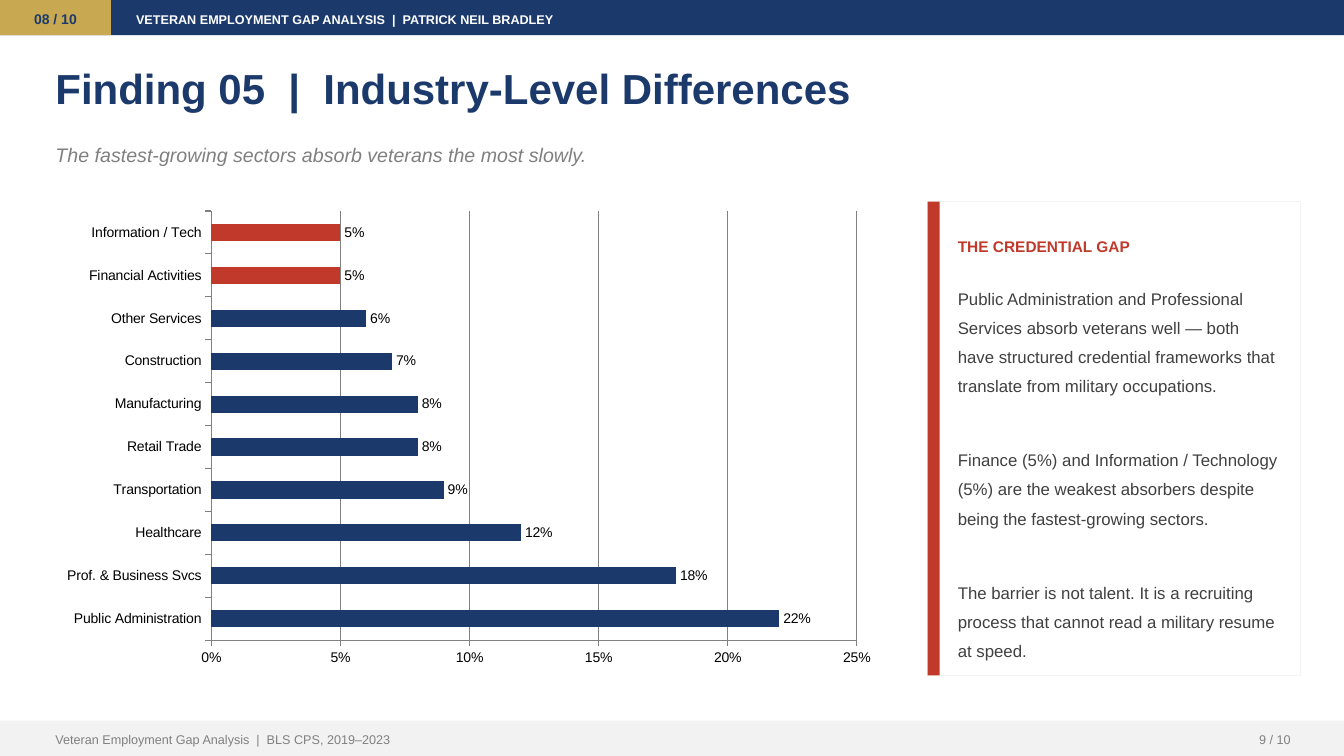
"""Build the slide on industry-level differences in veteran hiring."""
from dataclasses import dataclass

import pptx
import pptx.chart.data
import pptx.dml.color
import pptx.enum.chart
import pptx.enum.shapes
import pptx.enum.text
import pptx.util

Inches = pptx.util.Inches
Pt = pptx.util.Pt
Align = pptx.enum.text.PP_ALIGN
Anchor = pptx.enum.text.MSO_ANCHOR

FONT = "Arial"
HUES = {
    "navy": "1B3A6B", "gold": "C8A951", "red": "C0392B", "white": "FFFFFF",
    "pale": "F2F2F2", "gray": "808080", "dark": "404040", "black": "000000",
}
WIDE, HIGH, BAND = 13.33, 7.5, 0.35
FOOT = HIGH - BAND
LEFT, TOP, TALL = 0.5, 2, 4.7
SIDE, INNER = 9.2, 9.45


@dataclass
class Block:
    x: float
    y: float
    w: float
    h: float
    fill: str
    line: str = ""


@dataclass
class Label:
    x: float
    y: float
    w: float
    h: float
    text: str
    size: int
    hue: str
    bold: bool = False
    slant: bool = False
    align: Align = Align.LEFT
    anchor: Anchor = Anchor.MIDDLE
    lead: float = 1.2
    gap: int = 0


BLOCKS = [
    Block(0, 0, WIDE, BAND, "navy"),
    Block(0, 0, 1.1, BAND, "gold"),
    Block(SIDE, TOP, 3.7, TALL, "white", "pale"),
    Block(SIDE, TOP, 0.12, TALL, "red"),
    Block(0, FOOT, WIDE, BAND, "pale"),
]

TITLE = Label(LEFT, 0.55, 12.3, 0.9, "Finding 05  |  Industry-Level Differences",
              30, "navy", bold=True, anchor=Anchor.TOP, lead=1.1)

BODY = "\n".join([
    "Public Administration and Professional Services absorb veterans well — both have "
    "structured credential frameworks that translate from military occupations.",
    "Finance (5%) and Information / Technology (5%) are the weakest absorbers despite "
    "being the fastest-growing sectors.",
    "The barrier is not talent. It is a recruiting process that cannot read a military "
    "resume at speed.",
])

LABELS = [
    Label(0, 0, 1.1, BAND, "08 / 10", 10, "navy", bold=True, align=Align.CENTER),
    Label(1.3, 0, 11, BAND, "VETERAN EMPLOYMENT GAP ANALYSIS  |  PATRICK NEIL BRADLEY",
          9, "white", bold=True),
    Label(LEFT, 1.35, 12.3, 0.5, "The fastest-growing sectors absorb veterans the most slowly.",
          14, "gray", slant=True, anchor=Anchor.TOP),
    Label(INNER, 2.3, 3.3, 0.4, "THE CREDENTIAL GAP", 11, "red", bold=True, anchor=Anchor.TOP),
    Label(INNER, 2.75, 3.3, 3.7, BODY, 12, "dark", anchor=Anchor.TOP, lead=1.45, gap=32),
    Label(LEFT, FOOT, 8, BAND, "Veteran Employment Gap Analysis  |  BLS CPS, 2019–2023",
          9, "gray"),
    Label(11.7, FOOT, 1.15, BAND, "9 / 10", 9, "gray", align=Align.RIGHT),
]

SHARES = {
    "Public Administration": 0.22,
    "Prof. & Business Svcs": 0.18,
    "Healthcare": 0.12,
    "Transportation": 0.09,
    "Retail Trade": 0.08,
    "Manufacturing": 0.08,
    "Construction": 0.07,
    "Other Services": 0.06,
    "Financial Activities": 0.05,
    "Information / Tech": 0.05,
}
WEAK = 0.05


def shade(name: str) -> pptx.dml.color.RGBColor:
    return pptx.dml.color.RGBColor.from_string(HUES[name])


def paint(fill, name: str) -> None:
    fill.solid()
    fill.fore_color.rgb = shade(name)


def style(font, size: int, hue: str) -> None:
    font.name = FONT
    font.size = Pt(size)
    font.color.rgb = shade(hue)


def draw_block(slide, block: Block) -> None:
    shape = slide.shapes.add_shape(
        pptx.enum.shapes.MSO_SHAPE.RECTANGLE,
        Inches(block.x), Inches(block.y), Inches(block.w), Inches(block.h))
    shape.shadow.inherit = False
    paint(shape.fill, block.fill)
    if block.line:
        shape.line.color.rgb = shade(block.line)
        shape.line.width = Pt(0.75)
    else:
        shape.line.fill.background()


def set_text(shape, label: Label) -> None:
    shape.left, shape.top = Inches(label.x), Inches(label.y)
    shape.width, shape.height = Inches(label.w), Inches(label.h)
    frame = shape.text_frame
    frame.text = label.text
    frame.word_wrap = True
    frame.auto_size = pptx.enum.text.MSO_AUTO_SIZE.SHAPE_TO_FIT_TEXT
    frame.vertical_anchor = label.anchor
    frame.margin_left = frame.margin_right = Inches(0.05)
    frame.margin_top = frame.margin_bottom = Inches(0.02)
    for rank, para in enumerate(frame.paragraphs):
        para.alignment = label.align
        para.line_spacing = label.lead
        para.space_before = Pt(label.gap if rank else 0)
        for run in para.runs:
            style(run.font, label.size, label.hue)
            run.font.bold = label.bold
            run.font.italic = label.slant


def draw_label(slide, label: Label) -> None:
    box = slide.shapes.add_textbox(0, 0, Inches(label.w), Inches(label.h))
    set_text(box, label)


def draw_chart(slide) -> None:
    data = pptx.chart.data.CategoryChartData(number_format="0%")
    data.categories = list(SHARES)
    data.add_series("Series 1", list(SHARES.values()))
    chart = slide.shapes.add_chart(
        pptx.enum.chart.XL_CHART_TYPE.BAR_CLUSTERED,
        Inches(LEFT), Inches(TOP), Inches(8.3), Inches(TALL), data).chart
    style(chart.font, 10, "black")
    chart.has_title = chart.has_legend = False

    scale = chart.value_axis
    scale.minimum_scale, scale.maximum_scale, scale.major_unit = 0, 0.25, 0.05
    scale.has_major_gridlines = True
    scale.major_gridlines.format.line.color.rgb = shade("gray")
    scale.tick_labels.number_format = "0%"
    scale.tick_labels.number_format_is_linked = False
    for axis in (scale, chart.category_axis):
        axis.major_tick_mark = pptx.enum.chart.XL_TICK_MARK.OUTSIDE
        axis.format.line.color.rgb = shade("gray")
        style(axis.tick_labels.font, 10, "black")

    plot = chart.plots[0]
    plot.gap_width = 150
    plot.vary_by_categories = False
    bars = plot.series[0]
    paint(bars.format.fill, "navy")
    for rank, share in enumerate(SHARES.values()):
        paint(bars.points[rank].format.fill, "red" if share <= WEAK else "navy")
    marks = bars.data_labels
    marks.show_value = True
    marks.number_format = "0%"
    marks.number_format_is_linked = False
    marks.position = pptx.enum.chart.XL_LABEL_POSITION.OUTSIDE_END
    style(marks.font, 10, "black")


def main() -> None:
    deck = pptx.Presentation()
    deck.slide_width, deck.slide_height = Inches(WIDE), Inches(HIGH)
    slide = deck.slides.add_slide(deck.slide_layouts[5])
    set_text(slide.shapes.title, TITLE)
    for block in BLOCKS:
        draw_block(slide, block)
    draw_chart(slide)
    for label in LABELS:
        draw_label(slide, label)
    deck.save("out.pptx")


if __name__ == "__main__":
    main()
